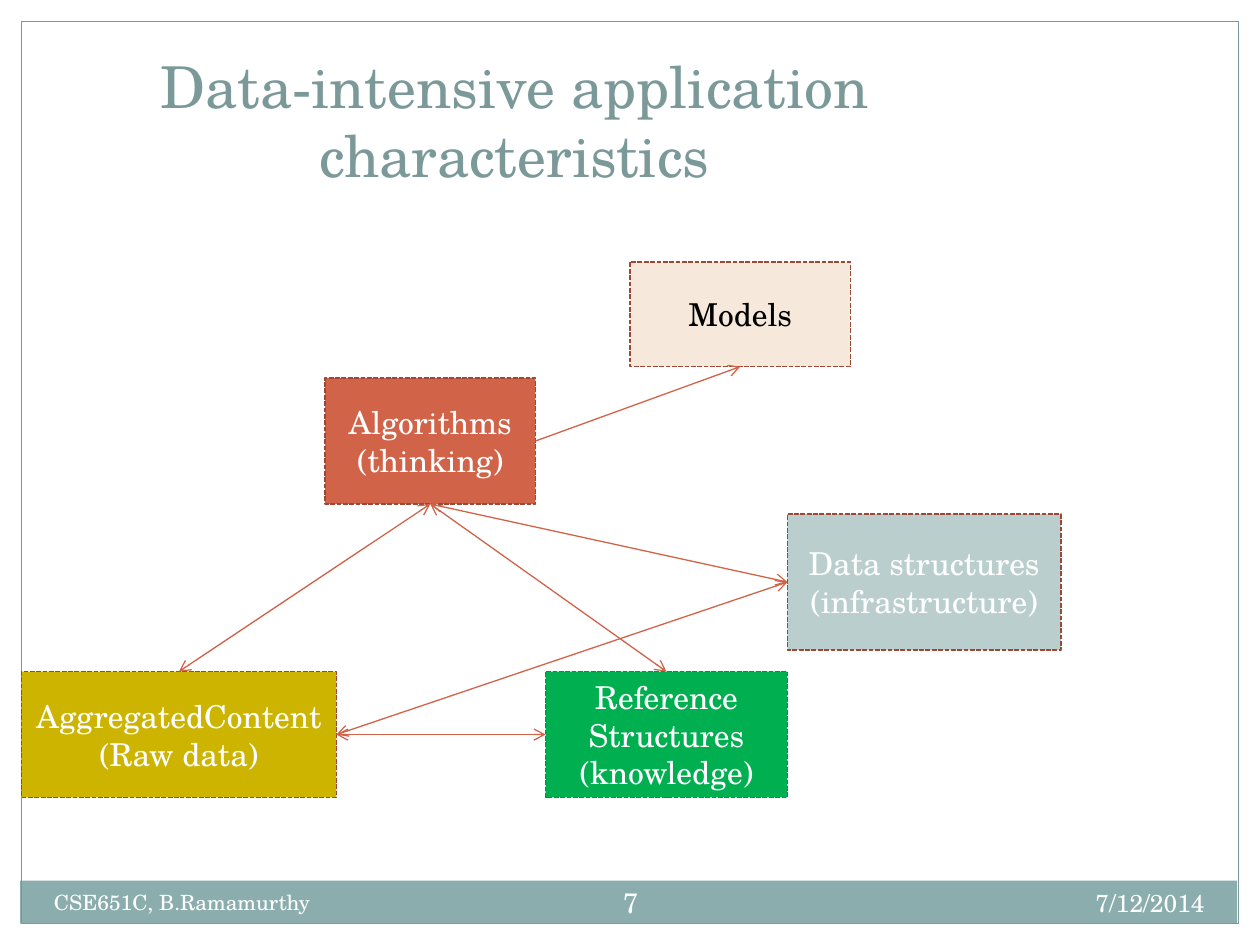
from dataclasses import dataclass

from pptx import Presentation
from pptx.dml.color import RGBColor
from pptx.enum.dml import MSO_LINE
from pptx.enum.shapes import MSO_CONNECTOR, MSO_SHAPE
from pptx.enum.text import MSO_ANCHOR, PP_ALIGN
from pptx.oxml.ns import qn
from pptx.util import Inches, Pt
from lxml import etree

RECTANGLE = MSO_SHAPE.RECTANGLE
STRAIGHT = MSO_CONNECTOR.STRAIGHT
DASH = MSO_LINE.SQUARE_DOT
LEFT, CENTER, RIGHT = PP_ALIGN.LEFT, PP_ALIGN.CENTER, PP_ALIGN.RIGHT
TOP, MIDDLE, BOTTOM = MSO_ANCHOR.TOP, MSO_ANCHOR.MIDDLE, MSO_ANCHOR.BOTTOM
TOP_SITE, LEFT_SITE, BOTTOM_SITE, RIGHT_SITE = range(4)


@dataclass(frozen=True)
class Theme:
    font: str = "TeX Gyre Schola"
    white: str = "FFFFFF"
    black: str = "000000"
    teal: str = "7C999A"
    band: str = "8CADAE"
    border: str = "9B4936"
    red: str = "D16349"
    gold: str = "CCB400"
    green: str = "00B050"
    mist: str = "BACECE"
    cream: str = "F6E9DB"
    title_size: float = 33
    box_size: float = 18
    number_size: float = 16
    date_size: float = 14
    footer_size: float = 12
    thin: float = 0.75
    box_line: float = 0.9


THEME = Theme()


def color(value):
    return RGBColor.from_string(value)


def write(shape, lines, size, text_color, align, anchor):
    frame = shape.text_frame
    frame.word_wrap = True
    frame.vertical_anchor = anchor
    frame.text = "\n".join(lines)
    for paragraph in frame.paragraphs:
        paragraph.alignment = align
        paragraph.font.name = THEME.font
        paragraph.font.size = Pt(size)
        paragraph.font.color.rgb = color(text_color)


def add_text(slide, place, text, size, text_color, align, anchor=TOP):
    shape = slide.shapes.add_textbox(*map(Inches, place))
    write(shape, [text], size, text_color, align, anchor)
    return shape


def add_rectangle(slide, place, fill=None, line=None, width=THEME.thin):
    shape = slide.shapes.add_shape(RECTANGLE, *map(Inches, place))
    shape.shadow.inherit = False
    if fill:
        shape.fill.solid()
        shape.fill.fore_color.rgb = color(fill)
    else:
        shape.fill.background()
    if line:
        shape.line.color.rgb = color(line)
        shape.line.width = Pt(width)
    else:
        shape.line.fill.background()
    return shape


def add_box(slide, place, fill, lines, text_color=THEME.white):
    box = add_rectangle(slide, place, fill, THEME.border, THEME.box_line)
    box.line.dash_style = DASH
    write(box, lines, THEME.box_size, text_color, CENTER, MIDDLE)
    return box


def add_arrow(slide, start, start_site, end, end_site, both=True):
    arrow = slide.shapes.add_connector(STRAIGHT, 0, 0, 0, 0)
    arrow.begin_connect(start, start_site)
    arrow.end_connect(end, end_site)
    arrow.line.color.rgb = color(THEME.red)
    arrow.line.width = Pt(THEME.thin)
    line = arrow.line._get_or_add_ln()
    for tag in ("a:headEnd", "a:tailEnd") if both else ("a:tailEnd",):
        etree.SubElement(line, qn(tag), type="arrow")
    etree.SubElement(line.getparent(), qn("a:effectLst"))


def add_frame(slide):
    add_rectangle(slide, (0.16, 6.99, 9.66, 0.34), THEME.band)
    add_rectangle(slide, (0.17, 0.17, 9.66, 7.16), line=THEME.teal)
    add_text(slide, (6.33, 7, 3.33, 0.4), "7/12/2014", THEME.date_size, THEME.white, RIGHT)
    number = add_text(slide, (4.67, 6.92, 0.67, 0.48), "7", THEME.number_size,
                      THEME.white, CENTER, MIDDLE)
    number.text_frame.margin_left = number.text_frame.margin_right = Inches(0.05)
    add_text(slide, (0.33, 7.01, 3.92, 0.4), "CSE651C, B.Ramamurthy",
             THEME.footer_size, THEME.white, LEFT)


def add_diagram(slide):
    content = add_box(slide, (0.17, 5.33, 2.5, 1), THEME.gold,
                      ["AggregatedContent (Raw data)"])
    algorithms = add_box(slide, (2.58, 3, 1.67, 1), THEME.red, ["Algorithms (thinking)"])
    reference = add_box(slide, (4.33, 5.33, 1.92, 1), THEME.green,
                        ["Reference", "Structures", "(knowledge)"])
    structures = add_box(slide, (6.25, 4.08, 2.17, 1.08), THEME.mist,
                         ["Data structures (infrastructure)"])
    models = add_box(slide, (5, 2.08, 1.75, 0.83), THEME.cream, ["Models"], THEME.black)

    add_arrow(slide, content, TOP_SITE, algorithms, BOTTOM_SITE)
    add_arrow(slide, algorithms, BOTTOM_SITE, reference, TOP_SITE)
    add_arrow(slide, content, RIGHT_SITE, reference, LEFT_SITE)
    add_arrow(slide, content, RIGHT_SITE, structures, LEFT_SITE)
    add_arrow(slide, algorithms, BOTTOM_SITE, structures, LEFT_SITE)
    add_arrow(slide, algorithms, RIGHT_SITE, models, BOTTOM_SITE, both=False)


def main():
    presentation = Presentation()
    presentation.slide_width = Inches(10)
    presentation.slide_height = Inches(7.5)
    slide = presentation.slides.add_slide(presentation.slide_layouts[6])
    add_frame(slide)
    add_text(slide, (0, 0.3, 8.17, 1.25), "Data-intensive application characteristics",
             THEME.title_size, THEME.teal, CENTER, BOTTOM)
    add_diagram(slide)
    presentation.save("out.pptx")


if __name__ == "__main__":
    main()
